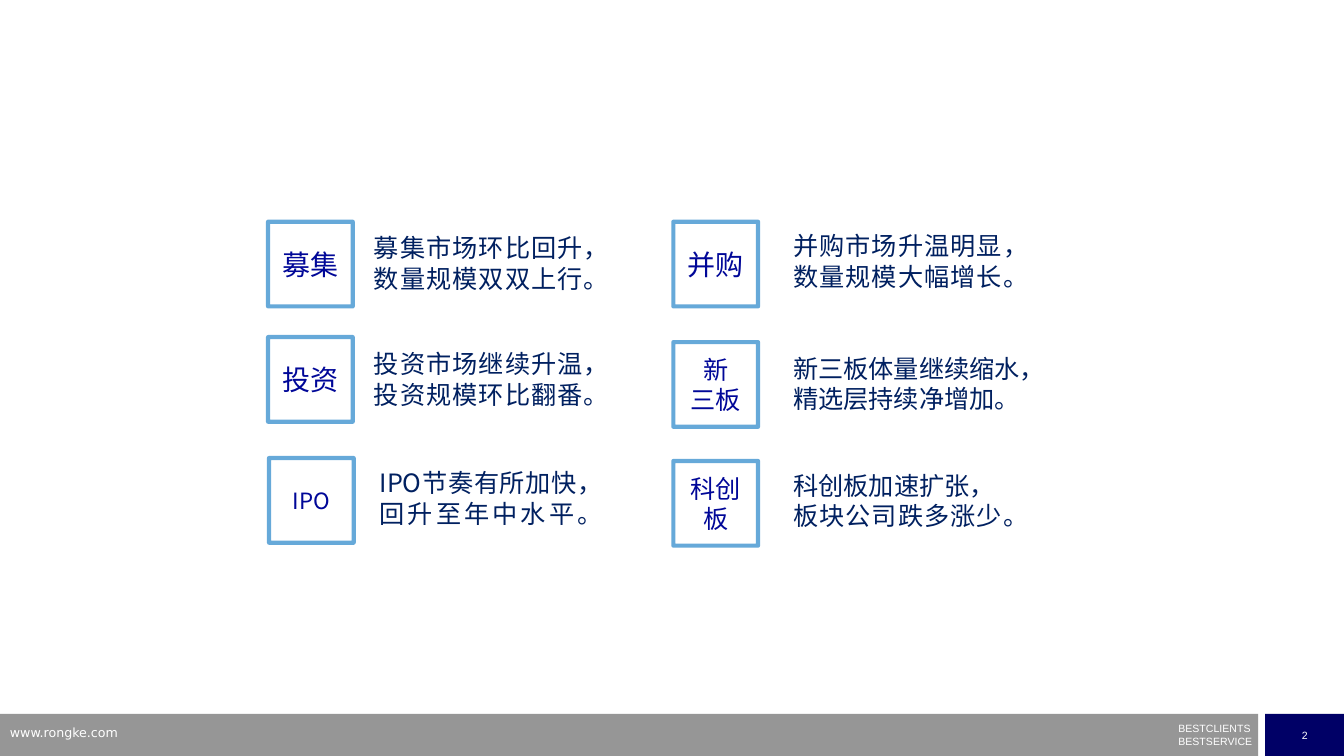
from dataclasses import dataclass

from lxml.etree import SubElement
from pptx import Presentation
from pptx.dml.color import RGBColor
from pptx.enum.lang import MSO_LANGUAGE_ID as Lang
from pptx.enum.shapes import MSO_SHAPE as Shape
from pptx.enum.text import MSO_ANCHOR as Anchor, MSO_AUTO_SIZE as AutoSize, PP_ALIGN as Align
from pptx.oxml.ns import qn
from pptx.util import Pt


@dataclass(frozen=True)
class Theme:
    white: str = "FFFFFF"
    footer_grey: str = "969696"
    footer_navy: str = "000066"
    border: str = "0070C0"
    border_alpha: int = 60000
    label: str = "000798"
    body: str = "002060"
    label_font: str = "Noto Sans CJK JP"
    body_font: str = "Noto Sans CJK SC"
    footer_font: str = "Arial"
    site_font: str = "DejaVu Sans"
    body_size: float = 18
    footer_size: float = 7.5
    site_size: float = 9


@dataclass(frozen=True)
class Market:
    """One labelled market; the summary is placed relative to the label's top left."""
    top: float
    label: tuple
    label_size: float
    summary: tuple
    drop: float
    indent: float = 0
    summary_width: float = 164.2


THEME = Theme()
SLIDE_W, SLIDE_H = 960, 540
LABEL_SIDE = 60.5
SUMMARY_H = 51
FOOTER_H = 30

FUNDING = (
    Market(158.4, ("募集",), 20, ("募集市场环比回升，", "数量规模双双上行。"), 4.3),
    Market(240.8, ("投资",), 20, ("投资市场继续升温，", "投资规模环比翻番。"), 4.7),
    Market(327.2, ("IPO",), 16, ("IPO节奏有所加快，", "回升至年中水平。"), 3.3, 0.7, 155.5),
)
TRADING = (
    Market(158.4, ("并购",), 20, ("并购市场升温明显，", "数量规模大幅增长。"), 2.9),
    Market(244.4, ("新", "三板"), 18, ("新三板体量继续缩水，", "精选层持续净增加。"), 4.2,
           summary_width=194.4),
    Market(329.3, ("科创板",), 18, ("科创板加速扩张，", "板块公司跌多涨少。"), 2.9),
)


def write(frame, lines, font_name, size, color, align=Align.LEFT):
    """Fill a text frame with one paragraph per line and return the paragraphs."""
    paragraphs = [frame.paragraphs[0]] + [frame.add_paragraph() for _ in lines[1:]]
    for paragraph, line in zip(paragraphs, lines):
        paragraph.alignment = align
        run = paragraph.add_run()
        run.text = line
        font = run.font
        font.name, font.size = font_name, Pt(size)
        font.color.rgb = RGBColor.from_string(color)
        font.language_id = Lang.SIMPLIFIED_CHINESE
        SubElement(run._r.get_or_add_rPr(), qn("a:ea"), typeface=font_name)
    return paragraphs


def add_rectangle(slide, left, top, width, height, fill=None):
    rectangle = slide.shapes.add_shape(Shape.RECTANGLE, Pt(left), Pt(top), Pt(width), Pt(height))
    rectangle.shadow.inherit = False
    rectangle.line.fill.background()
    if fill:
        rectangle.fill.solid()
        rectangle.fill.fore_color.rgb = RGBColor.from_string(fill)
    else:
        rectangle.fill.background()
    return rectangle


def add_text_frame(slide, left, top, width, height):
    frame = slide.shapes.add_textbox(Pt(left), Pt(top), Pt(width), Pt(height)).text_frame
    frame.word_wrap = True
    return frame


def add_label(slide, left, market):
    label = add_rectangle(slide, left, market.top, LABEL_SIDE, LABEL_SIDE)
    label.line.color.rgb = RGBColor.from_string(THEME.border)
    label.line.width = Pt(3)
    border_color = label.line._ln.find(".//" + qn("a:srgbClr"))
    SubElement(border_color, qn("a:alpha"), val=str(THEME.border_alpha))
    label.text_frame.vertical_anchor = Anchor.MIDDLE
    write(label.text_frame, market.label, THEME.label_font, market.label_size,
          THEME.label, Align.CENTER)


def add_market_column(slide, left, summary_offset, markets):
    for market in markets:
        label_left = left + market.indent
        add_label(slide, label_left, market)
        # An indented label moves its summary further than itself
        summary_left = left + summary_offset + 6 * market.indent
        summary = add_text_frame(slide, summary_left, market.top + market.drop,
                                 market.summary_width, SUMMARY_H)
        summary.auto_size = AutoSize.SHAPE_TO_FIT_TEXT
        write(summary, market.summary, THEME.body_font, THEME.body_size,
              THEME.body, Align.JUSTIFY)


def add_footer(slide, top, width, height):
    page_w = 56.9
    page_left = width - page_w + 0.5
    add_rectangle(slide, 0, top, page_left - 5, height, THEME.footer_grey)

    page = add_rectangle(slide, page_left, top, page_w, height, THEME.footer_navy).text_frame
    page.word_wrap = False
    page.vertical_anchor = Anchor.MIDDLE
    write(page, ("2",), THEME.footer_font, THEME.footer_size, THEME.white, Align.CENTER)

    motto = add_text_frame(slide, page_left - 61.9, top + 9.8, 54.7, 14.4)
    motto.margin_left = motto.margin_top = motto.margin_right = motto.margin_bottom = 0
    motto_lines = write(motto, ("BESTCLIENTS", "BESTSERVICE"), THEME.footer_font,
                        THEME.footer_size, THEME.white)
    for line in motto_lines:
        line.line_spacing = 0.5
    motto_lines[1].space_before = Pt(4.3)

    site = add_text_frame(slide, 0, top + 4.1, 230.4, 18.7)
    write(site, ("www.rongke.com",), THEME.site_font, THEME.site_size, THEME.white)


def main():
    deck = Presentation()
    deck.slide_width, deck.slide_height = Pt(SLIDE_W), Pt(SLIDE_H)
    slide = deck.slides.add_slide(deck.slide_layouts[6])
    add_footer(slide, SLIDE_H - FOOTER_H, SLIDE_W, FOOTER_H)
    add_market_column(slide, 191.5, 68.4, FUNDING)
    add_market_column(slide, 481, 78.5, TRADING)
    deck.save("out.pptx")


if __name__ == "__main__":
    main()
